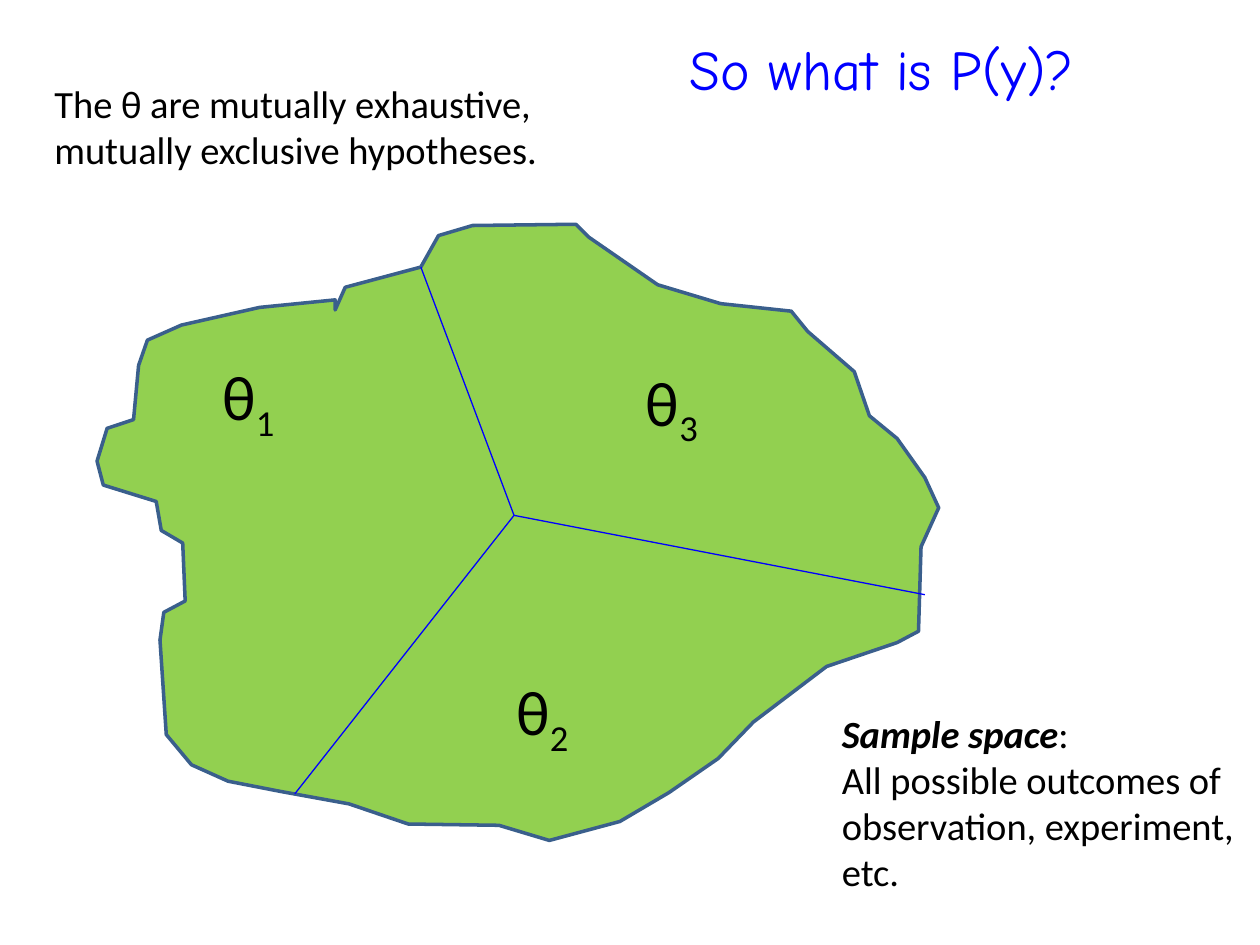
from lxml import etree
from pptx import Presentation
from pptx.dml.color import RGBColor
from pptx.enum.shapes import MSO_CONNECTOR
from pptx.enum.text import MSO_ANCHOR, MSO_AUTO_SIZE, PP_ALIGN
from pptx.oxml.ns import qn
from pptx.util import Pt

STRAIGHT = MSO_CONNECTOR.STRAIGHT
MIDDLE = MSO_ANCHOR.MIDDLE
FIT_SHAPE = MSO_AUTO_SIZE.SHAPE_TO_FIT_TEXT
CENTER = PP_ALIGN.CENTER

BLUE, GREEN, EDGE, BLACK = "0000FF", "92D050", "3A5F8C", "000000"


def rgb(hex_colour):
    return RGBColor.from_string(hex_colour)


def add_text(shapes, box, size, paragraphs):
    """Add an unwrapped text box; each paragraph is a list of (text, format) runs."""
    text_frame = shapes.add_textbox(*map(Pt, box)).text_frame
    text_frame.word_wrap = False
    text_frame.auto_size = FIT_SHAPE
    for index, runs in enumerate(paragraphs):
        paragraph = text_frame.add_paragraph() if index else text_frame.paragraphs[0]
        for text, run_format in runs:
            run = paragraph.add_run()
            run.text = text
            run.font.color.rgb = rgb(BLACK)
            for name, value in {"name": "Calibri", "size": Pt(size), **run_format}.items():
                if name == "baseline":
                    run.font._element.set(name, value)
                else:
                    setattr(run.font, name, value)


presentation = Presentation()
presentation.slide_width, presentation.slide_height = Pt(720), Pt(540)
slide = presentation.slides.add_slide(presentation.slide_layouts[5])

# Title
title = slide.shapes.title
title.left, title.top, title.width, title.height = Pt(180), Pt(-6), Pt(648), Pt(90)
title.text_frame.text = "So what is P(y)?"
title.text_frame.vertical_anchor = MIDDLE
heading = title.text_frame.paragraphs[0]
heading.alignment = CENTER
for name, value in {"name": "Comic Neue", "size": Pt(32)}.items():
    setattr(heading.runs[0].font, name, value)
heading.runs[0].font.color.rgb = rgb(BLUE)

# Explanations
add_text(slide.shapes, (24, 42, 295, 60.5), 22, [
    [("The θ are mutually exhaustive,", {})],
    [("mutually exclusive hypotheses.", {})],
])
add_text(slide.shapes, (474, 402, 246, 114), 22, [
    [("Sample space", {"bold": True, "italic": True}), (":", {})],
    [("All possible outcomes of", {})],
    [("observation, experiment,", {})],
    [("etc.", {})],
])

# Sample space outline, in hundredths of an inch (0.72 pt)
outline = [
    (266, 238), (206, 244), (144, 258), (117, 270), (110, 290), (106, 333),
    (85, 340), (77, 366), (82, 385), (124, 398), (128, 421), (145, 431),
    (147, 477), (130, 486), (127, 508), (132, 583), (152, 607), (181, 620),
    (222, 628), (277, 638), (324, 654), (396, 655), (436, 667), (492, 652),
    (531, 629), (570, 602), (598, 573), (656, 529), (712, 510), (729, 501),
    (731, 434), (745, 403), (734, 379), (712, 348), (690, 330), (678, 295),
    (641, 263), (628, 247), (572, 241), (522, 226), (467, 188), (457, 178),
    (375, 179), (348, 187), (334, 212), (274, 228), (266, 246),
]
diagram = slide.shapes.add_group_shape().shapes
builder = diagram.build_freeform(*outline[0], scale=Pt(0.72))
builder.add_line_segments(outline[1:], close=True)
sample_space = builder.convert_to_shape()
sample_space.shadow.inherit = False
sample_space.fill.solid()
sample_space.fill.fore_color.rgb = rgb(GREEN)
sample_space.line.color.rgb = rgb(EDGE)
sample_space.line.width = Pt(2)

# Borders between the hypotheses, all meeting at one point
meeting_point = (293.75, 294.5)
for border_end in [(240.5, 152.64), (168.5, 453.6), (528.5, 339.84)]:
    border = diagram.add_connector(STRAIGHT, *map(Pt, meeting_point + border_end))
    border.line.color.rgb = rgb(BLUE)
    border.line.width = Pt(0.75)
    etree.SubElement(border._element.spPr, qn("a:effectLst"))

# Hypothesis labels
for number, left, top in [("1", 120, 201), ("3", 362, 204), ("2", 288, 381)]:
    add_text(diagram, (left, top, 46, 51), 36, [
        [("θ", {}), (number, {"baseline": "-25000"})],
    ])

presentation.save("out.pptx")
